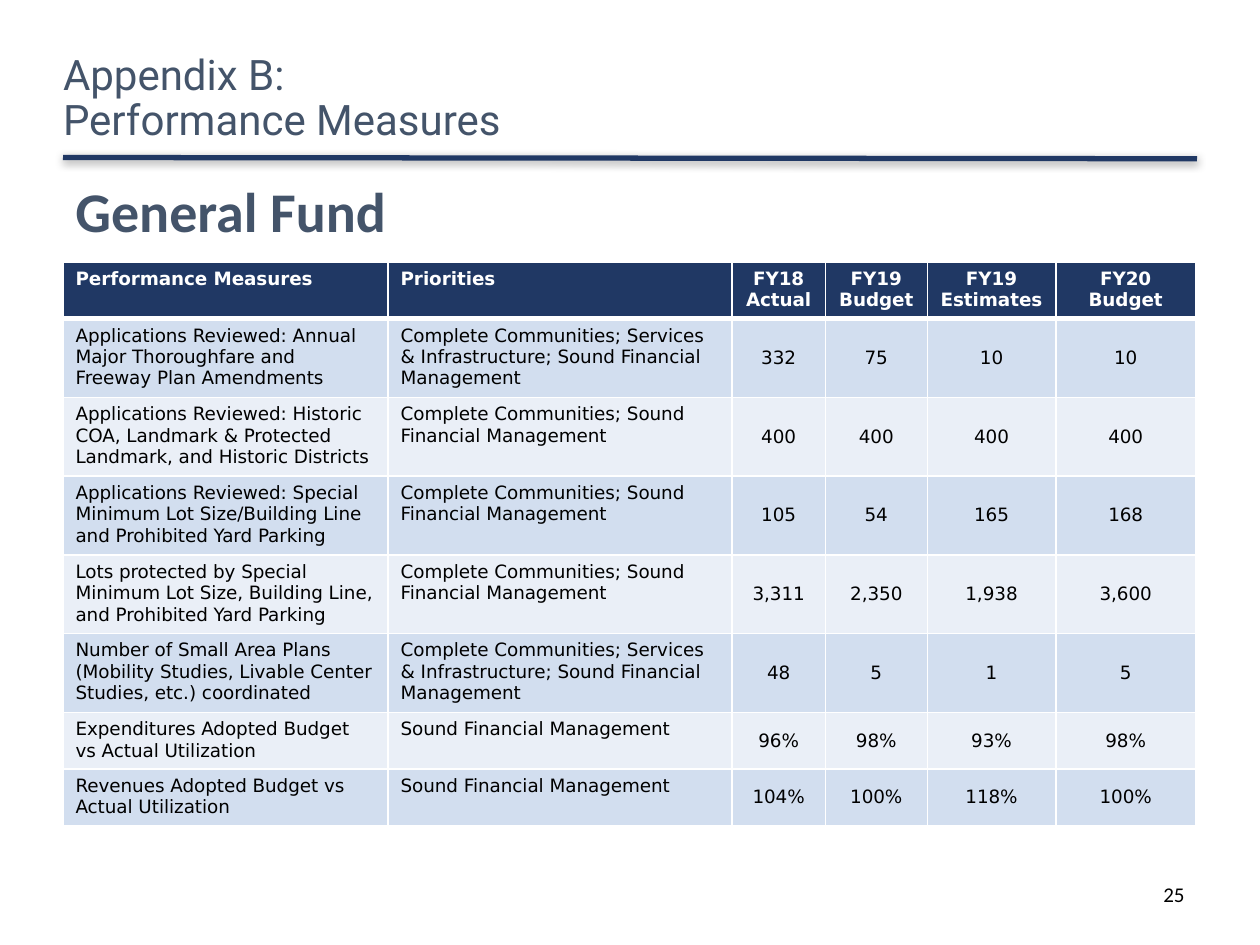
from dataclasses import dataclass

from pptx import Presentation
from pptx.dml.color import RGBColor
from pptx.enum import shapes, text
from pptx.oxml import parse_xml
from pptx.oxml.ns import nsdecls
from pptx.util import Inches, Pt


@dataclass(frozen=True)
class Theme:
    navy: str = "203864"
    slate: str = "44546A"
    black: str = "000000"
    white: str = "FFFFFF"
    bands: tuple = ("D2DEEF", "EAEFF7")
    title_font: str = "Roboto"
    body_font: str = "Calibri"
    table_font: str = "DejaVu Sans"
    title_size: float = 24
    heading_size: float = 32
    table_size: float = 10.5
    number_size: float = 12


THEME = Theme()

TITLE = ["Appendix B:", "Performance Measures"]
HEADING = "General Fund"
PAGE_NUMBER = "25"

HEADER = ["Performance Measures", "Priorities", "FY18\nActual", "FY19\nBudget",
          "FY19\nEstimates", "FY20\nBudget"]
SOUND = "Sound Financial Management"
COMMUNITIES = f"Complete Communities; {SOUND}"
SERVICES = f"Complete Communities; Services & Infrastructure; {SOUND}"
MEASURES = [
    ("Applications Reviewed: Annual Major Thoroughfare and Freeway Plan Amendments",
     SERVICES, "332", "75", "10", "10"),
    ("Applications Reviewed: Historic COA, Landmark & Protected Landmark, "
     "and Historic Districts", COMMUNITIES, "400", "400", "400", "400"),
    ("Applications Reviewed: Special Minimum Lot Size/Building Line "
     "and Prohibited Yard Parking", COMMUNITIES, "105", "54", "165", "168"),
    ("Lots protected by Special Minimum Lot Size, Building Line, "
     "and Prohibited Yard Parking", COMMUNITIES, "3,311", "2,350", "1,938", "3,600"),
    ("Number of Small Area Plans (Mobility Studies, Livable Center Studies, etc.) "
     "coordinated", SERVICES, "48", "5", "1", "5"),
    ("Expenditures Adopted Budget vs Actual Utilization",
     SOUND, "96%", "98%", "93%", "98%"),
    ("Revenues Adopted Budget vs Actual Utilization",
     SOUND, "104%", "100%", "118%", "100%"),
]

LEFT, WIDTH = 0.5, 9
TABLE_TOP = 2.08
COLUMN_WIDTHS = [2.58, 2.73, 0.74, 0.81, 1.02, 1.11]
LINES_PER_ROW = [2, 3, 3, 3, 3, 3, 2, 2]
ROW_HEIGHTS = [0.1 + 0.17 * lines for lines in LINES_PER_ROW]
TEXT_COLUMNS = 2


def add_span(para, words, font, size, color, bold=False):
    span = para.add_run()
    span.text = words
    span.font.name = font
    span.font.size = Pt(size)
    span.font.bold = bold
    span.font.color.rgb = RGBColor.from_string(color)


def add_title(page):
    title = page.shapes.title
    title.left, title.top = Inches(LEFT), Inches(0.33)
    title.width, title.height = Inches(6.86), Inches(0.92)
    frame = title.text_frame
    frame.word_wrap = True
    frame.auto_size = text.MSO_AUTO_SIZE.NONE
    frame.vertical_anchor = text.MSO_ANCHOR.MIDDLE
    frame.margin_left = frame.margin_right = frame.margin_top = frame.margin_bottom = 0
    para = frame.paragraphs[0]
    para.alignment = text.PP_ALIGN.LEFT
    para.line_spacing = 0.9
    for index, line in enumerate(TITLE):
        if index:
            para.add_line_break()
        add_span(para, line, THEME.title_font, THEME.title_size, THEME.slate)


def add_rule(page):
    rule = page.shapes.add_connector(
        shapes.MSO_CONNECTOR.STRAIGHT,
        Inches(LEFT), Inches(1.25), Inches(LEFT + WIDTH), Inches(1.26))
    rule.line.color.rgb = RGBColor.from_string(THEME.navy)
    rule.line.width = Pt(3)
    rule._element.spPr.append(parse_xml(
        f'<a:effectLst {nsdecls("a")}><a:outerShdw blurRad="{Pt(5)}" '
        f'dist="{Pt(1.6)}" dir="5400000" rotWithShape="0">'
        f'<a:srgbClr val="{THEME.black}"><a:alpha val="38000"/></a:srgbClr>'
        '</a:outerShdw></a:effectLst>'))


def add_label(page, place, words, size, color, bold=False, wrap=True,
              align=text.PP_ALIGN.LEFT):
    box = page.shapes.add_textbox(*map(Inches, place))
    box.text_frame.word_wrap = wrap
    para = box.text_frame.paragraphs[0]
    para.alignment = align
    add_span(para, words, THEME.body_font, size, color, bold)
    return box


def set_borders(cell, top, bottom):
    """Draw white borders, with the top and bottom widths in points."""
    properties = cell._tc.get_or_add_tcPr()
    for side, width in (("L", 1), ("R", 1), ("T", top), ("B", bottom)):
        properties.append(parse_xml(
            f'<a:ln{side} {nsdecls("a")} w="{Pt(width)}"><a:solidFill>'
            f'<a:srgbClr val="{THEME.white}"/></a:solidFill></a:ln{side}>'))


def fill_cell(cell, words, row, column):
    is_header, is_value = row == 0, column >= TEXT_COLUMNS
    set_borders(cell, top=3 if row == 1 else 1, bottom=3 if is_header else 1)
    fill = THEME.navy if is_header else THEME.bands[(row - 1) % 2]
    cell.fill.solid()
    cell.fill.fore_color.rgb = RGBColor.from_string(fill)
    if is_value and not is_header:
        cell.vertical_anchor = text.MSO_ANCHOR.MIDDLE
    frame = cell.text_frame
    for index, line in enumerate(words.split("\n")):
        para = frame.add_paragraph() if index else frame.paragraphs[0]
        para.alignment = text.PP_ALIGN.CENTER if is_value else text.PP_ALIGN.LEFT
        add_span(para, line, THEME.table_font, THEME.table_size,
                 THEME.white if is_header else THEME.black, is_header)


def add_measures(page):
    rows = [HEADER, *MEASURES]
    table = page.shapes.add_table(
        len(rows), len(HEADER), Inches(LEFT), Inches(TABLE_TOP),
        Inches(WIDTH), Inches(sum(ROW_HEIGHTS))).table
    for column, width in zip(table.columns, COLUMN_WIDTHS):
        column.width = Inches(width)
    for row, height in zip(table.rows, ROW_HEIGHTS):
        row.height = Inches(height)
    for r, row in enumerate(rows):
        for c, words in enumerate(row):
            fill_cell(table.cell(r, c), words, r, c)


def main():
    deck = Presentation()
    deck.slide_width, deck.slide_height = Inches(10), Inches(7.5)
    page = deck.slides.add_slide(deck.slide_layouts.get_by_name("Title Only"))
    add_rule(page)
    add_title(page)
    add_label(page, (7.17, 6.95, 2.33, 0.4), PAGE_NUMBER, THEME.number_size,
              THEME.black, align=text.PP_ALIGN.RIGHT)
    add_measures(page)
    heading = add_label(page, (LEFT, 1.35, 2.69, 0.64), HEADING,
                        THEME.heading_size, THEME.slate, bold=True, wrap=False)
    heading.text_frame.auto_size = text.MSO_AUTO_SIZE.SHAPE_TO_FIT_TEXT
    deck.save("out.pptx")


if __name__ == "__main__":
    main()
